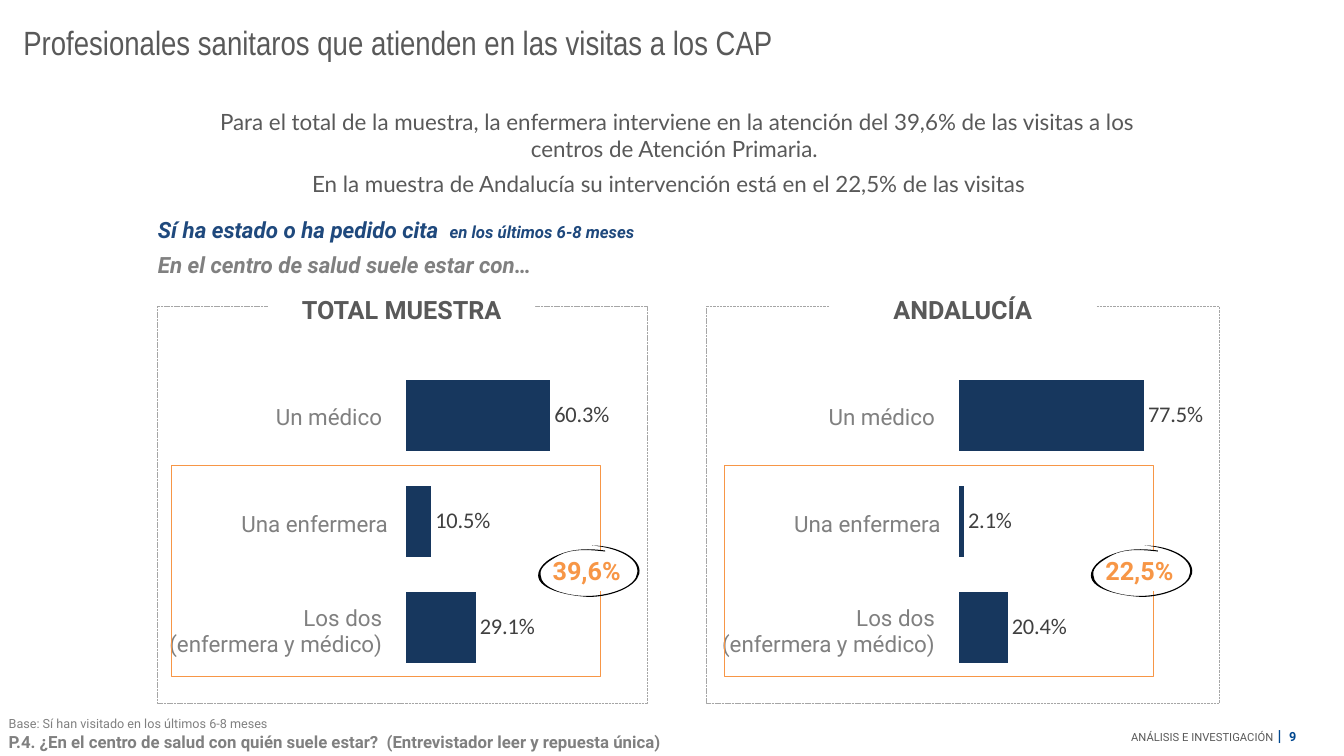
from dataclasses import dataclass

from lxml import etree
from pptx import Presentation
from pptx.chart.data import CategoryChartData
from pptx.dml.color import RGBColor
from pptx.enum.chart import XL_CHART_TYPE, XL_LABEL_POSITION
from pptx.enum.dml import MSO_LINE
from pptx.enum.shapes import MSO_SHAPE
from pptx.enum.text import MSO_ANCHOR, PP_ALIGN
from pptx.oxml.ns import qn
from pptx.util import Cm, Pt

RECT = MSO_SHAPE.RECTANGLE
BARS = XL_CHART_TYPE.BAR_CLUSTERED
OUTSIDE = XL_LABEL_POSITION.OUTSIDE_END
DASHED = MSO_LINE.SQUARE_DOT
TOP, MIDDLE, BOTTOM = MSO_ANCHOR.TOP, MSO_ANCHOR.MIDDLE, MSO_ANCHOR.BOTTOM
LEFT, CENTER, RIGHT = PP_ALIGN.LEFT, PP_ALIGN.CENTER, PP_ALIGN.RIGHT

WHITE = RGBColor(0xFF, 0xFF, 0xFF)
BLACK = RGBColor(0x00, 0x00, 0x00)
DARK_GREY = RGBColor(0x59, 0x59, 0x59)
MID_GREY = RGBColor(0x80, 0x80, 0x80)
FRAME_GREY = RGBColor(0xA6, 0xA6, 0xA6)
LABEL_GREY = RGBColor(0x40, 0x40, 0x40)
ORANGE = RGBColor(0xF7, 0x96, 0x46)
NAVY = RGBColor(0x17, 0x37, 0x5E)
BLUE = RGBColor(0x1F, 0x49, 0x7D)
FOOTER_BLUE = RGBColor(0x00, 0x47, 0x8F)
NO_GRID_STYLE = "{2D5ABB26-0587-4C30-8999-92F81FD0307C}"

# Hand-drawn ring in hundredths of an inch: start, then cubic curves
RING_UNIT = Cm(2.54) / 100
RING_START = (70, 6)
RING_CURVES = (
    ((55, 4), (40, 4), (27, 9)),
    ((15, 13), (6, 20), (4, 28)),
    ((0, 44), (32, 51), (54, 52)),
    ((77, 52), (101, 42), (104, 29)),
    ((107, 14), (83, 1), (57, 1)),
    ((57, 0), (57, 1), (57, 1)),
    ((81, 3), (104, 13), (102, 28)),
    ((101, 41), (78, 50), (56, 51)),
    ((34, 52), (6, 44), (6, 30)),
    ((5, 22), (15, 16), (24, 11)),
    ((37, 4), (53, 5), (70, 7)),
    ((70, 7), (70, 6), (70, 6)),
)


@dataclass
class Span:
    text: str
    size: float
    color: RGBColor
    font: str = "Roboto"
    bold: bool = False
    italic: bool = False


@dataclass
class Box:
    left: float
    top: float
    width: float
    height: float


@dataclass
class Panel:
    heading: str
    frame: Box
    heading_left: float
    shift: float
    values: tuple[float, ...]
    nurse_share: str


ANSWERS = (("Un médico ",), ("Una enfermera",), ("Los dos ", "(enfermera y médico) "))
PANELS = (
    Panel("TOTAL MUESTRA", Box(3.96, 7.72, 12.34, 10.01), 6.76, 0,
          (60.3, 10.5, 29.1), "39,6%"),
    Panel("ANDALUCÍA", Box(17.8, 7.72, 12.93, 10.01), 20.9, 13.93,
          (77.5, 2.1, 20.4), "22,5%"),
)


def place(box: Box) -> tuple:
    return Cm(box.left), Cm(box.top), Cm(box.width), Cm(box.height)


def add_span(para, span: Span) -> None:
    run = para.add_run()
    run.text = span.text
    font = run.font
    font.name, font.size = span.font, Pt(span.size)
    font.bold, font.italic = span.bold, span.italic
    font.color.rgb = span.color


def add_text(slide, box: Box, paras: list[list[Span]], align=LEFT, anchor=TOP,
             after: float = 0, inset: tuple[float, float] = (0.25, 0.13)):
    shape = slide.shapes.add_textbox(*place(box))
    frame = shape.text_frame
    frame.word_wrap = True
    frame.vertical_anchor = anchor
    frame.margin_left = frame.margin_right = Cm(inset[0])
    frame.margin_top = frame.margin_bottom = Cm(inset[1])
    for index, spans in enumerate(paras):
        para = frame.add_paragraph() if index else frame.paragraphs[0]
        para.alignment = align
        para.space_after = Pt(after)
        for span in spans:
            add_span(para, span)
    return shape


def fill_white(shape) -> None:
    shape.fill.solid()
    shape.fill.fore_color.rgb = WHITE


def add_outline(slide, box: Box, color: RGBColor, width: float, dash=None) -> None:
    shape = slide.shapes.add_shape(RECT, *place(box))
    shape.shadow.inherit = False
    shape.fill.background()
    shape.line.color.rgb = color
    shape.line.width = Pt(width)
    if dash is not None:
        shape.line.dash_style = dash


def add_answers(slide, box: Box) -> None:
    holder = slide.shapes.add_table(len(ANSWERS), 1, *place(box))
    table = holder.table
    table.first_row = table.horz_banding = False
    for style in holder.element.iter(qn("a:tableStyleId")):
        style.text = NO_GRID_STYLE
    for row, lines in enumerate(ANSWERS):
        cell = table.cell(row, 0)
        cell.fill.background()
        cell.vertical_anchor = MIDDLE
        cell.margin_left = cell.margin_top = cell.margin_right = Cm(0.03)
        cell.margin_bottom = 0
        para = cell.text_frame.paragraphs[0]
        para.alignment = RIGHT
        for index, line in enumerate(lines):
            if index:
                para.add_line_break()
            add_span(para, Span(line, 16, MID_GREY))


def add_bars(slide, box: Box, values: tuple[float, ...]) -> None:
    data = CategoryChartData()
    data.categories = ["1", "2", "3"]
    data.add_series("Series 1", values)
    chart = slide.shapes.add_chart(BARS, *place(box), data).chart
    chart.has_legend = chart.has_title = False
    chart.font.name, chart.font.size = "Calibri", Pt(11)
    chart.font.color.rgb = LABEL_GREY
    chart.category_axis.reverse_order = True
    chart.value_axis.minimum_scale, chart.value_axis.maximum_scale = 0, 100
    chart.value_axis.has_major_gridlines = False
    chart.category_axis.visible = chart.value_axis.visible = False
    plot = chart.plots[0]
    plot.gap_width, plot.vary_by_categories = 50, False
    fill = plot.series[0].format.fill
    fill.solid()
    fill.fore_color.rgb = NAVY
    plot.has_data_labels = True
    labels = plot.data_labels
    labels.show_value, labels.position = True, OUTSIDE
    labels.number_format, labels.number_format_is_linked = "0.0\\%", False
    labels.font.name, labels.font.size = "Calibri", Pt(16)
    labels.font.color.rgb = LABEL_GREY
    # Fixed inner plot area
    area = chart.element.find(".//" + qn("c:plotArea"))
    for old in area.findall(qn("c:layout")):
        area.remove(old)
    layout = etree.Element(qn("c:layout"))
    area.insert(0, layout)
    manual = etree.SubElement(layout, qn("c:manualLayout"))
    for tag, value in (("layoutTarget", "inner"), ("xMode", "edge"), ("yMode", "edge"),
                       ("x", "0"), ("y", "0"), ("w", "0.72"), ("h", "0.98")):
        etree.SubElement(manual, qn("c:" + tag)).set("val", value)


def add_ring(slide, left: float, top: float) -> None:
    builder = slide.shapes.build_freeform(*RING_START, scale=RING_UNIT)
    builder.add_line_segments([point for curve in RING_CURVES for point in curve])
    ring = builder.convert_to_shape(Cm(left), Cm(top))
    # Each three straight steps become one cubic curve
    steps = list(ring.element.iter(qn("a:lnTo")))
    for first in range(0, len(RING_CURVES) * 3, 3):
        curve = etree.Element(qn("a:cubicBezTo"))
        steps[first].addprevious(curve)
        for step in steps[first:first + 3]:
            curve.append(step[0])
            step.getparent().remove(step)
    ring.shadow.inherit = False
    ring.fill.solid()
    ring.fill.fore_color.rgb = BLACK
    ring.line.fill.background()


def add_panel(slide, panel: Panel) -> None:
    shift = panel.shift
    add_outline(slide, panel.frame, FRAME_GREY, 0.25, DASHED)
    fill_white(add_text(slide, Box(panel.heading_left, 7.13, 6.73, 1.35),
                        [[Span(panel.heading, 18, DARK_GREY, bold=True)]],
                        CENTER, MIDDLE, after=6))
    add_answers(slide, Box(2.99 + shift, 9.16, 6.81, 8.1))
    add_bars(slide, Box(10.24 + shift, 9.13, 8.36, 8.18), panel.values)
    add_outline(slide, Box(4.33 + shift, 11.73, 10.8, 5.31), ORANGE, 0.5)
    fill_white(add_text(slide, Box(13.54 + shift, 13.87, 2.49, 1.02),
                        [[Span(panel.nurse_share, 18, ORANGE, bold=True)]], CENTER))
    add_ring(slide, 13.47 + shift, 13.72)


def main() -> None:
    deck = Presentation()
    deck.slide_width, deck.slide_height = Cm(33.87), Cm(19.05)
    slide = deck.slides.add_slide(deck.slide_layouts[6])

    # Footer, title and base note
    add_text(slide, Box(28.07, 18.15, 4.85, 0.74), [[
        Span("ANÁLISIS E INVESTIGACIÓN", 8, DARK_GREY), Span(" ", 11, DARK_GREY),
        Span("|  ", 11, FOOTER_BLUE, bold=True), Span("9", 9, FOOTER_BLUE, bold=True),
    ]], RIGHT, MIDDLE)
    add_text(slide, Box(0.34, 0.43, 29.01, 1.27), [[
        Span("Profesionales sanitaros que atienden en las visitas a los CAP",
             24, DARK_GREY, "Arial Narrow")]])
    add_text(slide, Box(0, 17.92, 23.34, 1.12), [
        [Span("Base: Sí han visitado en los últimos 6-8 meses", 9, MID_GREY)],
        [Span("P.4. ¿En el centro de salud con quién suele estar?  "
              "(Entrevistador leer y repuesta única)", 12, MID_GREY, bold=True)],
    ], anchor=BOTTOM, inset=(0.22, 0.1))

    # Question and summary
    fill_white(add_text(slide, Box(3.73, 5.32, 14.81, 1.83), [
        [Span("Sí ha estado o ha pedido cita  ", 16, BLUE, bold=True, italic=True),
         Span("en los últimos 6-8 meses", 12, BLUE, bold=True, italic=True)],
        [Span("En el centro de salud suele estar con…", 16, MID_GREY,
              bold=True, italic=True)],
    ], after=6))
    summary = add_text(slide, Box(5.21, 2.72, 23.72, 2.26), [
        [Span("Para el total de la muestra, la enfermera interviene en la atención del "
              "39,6% de las visitas a los centros de Atención Primaria. ",
              16, DARK_GREY, "Lato")],
        [Span("En la muestra de Andalucía su intervención está en el 22,5% de las visitas",
              16, DARK_GREY, "Lato")],
    ], CENTER, MIDDLE, after=6)
    fill_white(summary)
    closing = summary.text_frame.paragraphs[1]
    closing._p.get_or_add_pPr().set("marR", str(Cm(0.43)))

    # Sample panels
    for panel in PANELS:
        add_panel(slide, panel)
    deck.save("out.pptx")


if __name__ == "__main__":
    main()
